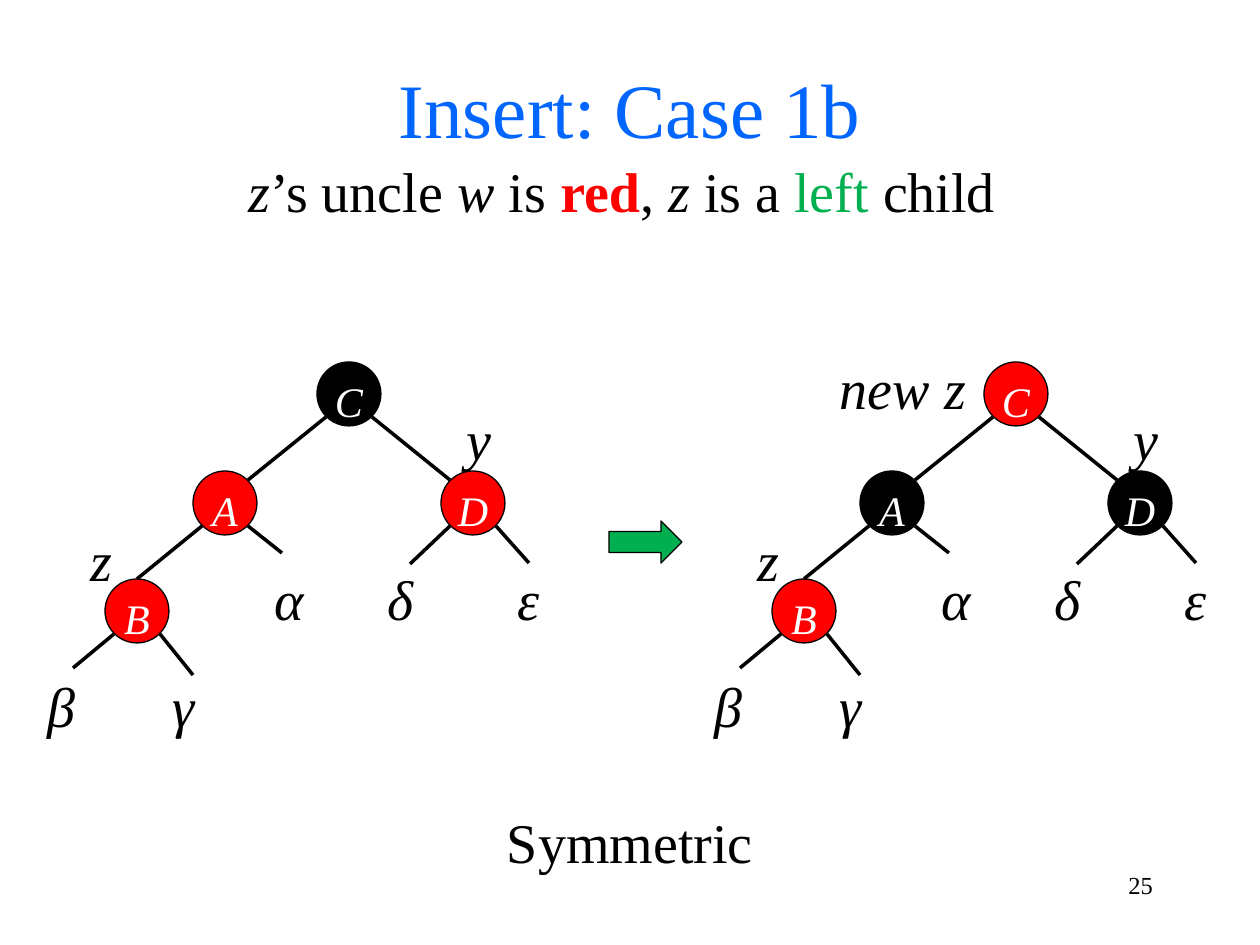
from lxml import etree
from pptx import Presentation
from pptx import util as u
from pptx.dml.color import RGBColor
from pptx.enum import shapes, text
from pptx.oxml.ns import qn

FONT = "Times New Roman"
HUES = {"black": "000000", "white": "FFFFFF", "red": "FF0000",
        "green": "00B050", "blue": "0066FF"}
SIDE = 64    # node diameter
REACH = 23   # from a node's centre to its diagonal points, in x and y

# Places inside a tree's box: node centres, edges and leaf stubs, labels
NODES = {"C": (328, 53), "A": (204, 162), "D": (452, 162), "B": (116, 270)}
EDGES = [("C", -1, "A"), ("C", 1, "D")]
STUBS = [("A", -1, (116, 238)), ("A", 1, (261, 212)),
         ("D", -1, (389, 223)), ("D", 1, (508, 222)),
         ("B", -1, (52, 327)), ("B", 1, (172, 334))]
LABELS = [("z", 52, 173, 57), ("y", 429, 52, 57),
          (" α", 221, 212, 81), (" δ", 332, 212, 81), (" ε", 460, 212, 81),
          ("β", 0, 319, 81), (" γ", 115, 319, 81)]


def px(n):
    return u.Emu(round(n * 914400 / 126))


def hue(name):
    return RGBColor.from_string(HUES[name])


def place(shape, x, y, w, h):
    box = {"left": x, "top": y, "width": w, "height": h}
    for key, val in box.items():
        setattr(shape, key, px(val))


def write(shape, runs, size, top, align="CENTER", anchor="TOP", side=0):
    """Fill a shape with one paragraph; runs are (words, colour, italic, bold)."""
    frame = shape.text_frame
    form = {"word_wrap": True, "auto_size": text.MSO_AUTO_SIZE.NONE,
            "vertical_anchor": getattr(text.MSO_ANCHOR, anchor),
            "margin_top": px(top), "margin_bottom": 0,
            "margin_left": px(side), "margin_right": px(side)}
    for key, val in form.items():
        setattr(frame, key, val)
    para = frame.paragraphs[0]
    para.alignment = getattr(text.PP_ALIGN, align)
    para.space_before = u.Pt(0)
    for words, tint, slant, bold in runs:
        run = para.add_run()
        run.text = words
        look = {"name": FONT, "size": u.Pt(size), "italic": slant, "bold": bold}
        for key, val in look.items():
            setattr(run.font, key, val)
        run.font.color.rgb = hue(tint)
    return para


def label(parts, words, x, y, w, h=62, slant=True):
    box = parts.add_textbox(px(x), px(y), px(w), px(h))
    write(box, [(words, "black", slant, False)], 32, 12)


def solid(parts, kind, tint, x, y, w, h):
    shape = parts.add_shape(kind, px(x), px(y), px(w), px(h))
    shape.shadow.inherit = False
    shape.fill.solid()
    shape.fill.fore_color.rgb = hue(tint)
    shape.line.color.rgb = hue("black")
    shape.line.width = u.Pt(0.75)
    return shape


def line(parts, x1, y1, x2, y2):
    link = parts.add_connector(shapes.MSO_CONNECTOR.STRAIGHT,
                               px(x1), px(y1), px(x2), px(y2))
    link.line.color.rgb = hue("black")
    link.line.width = u.Pt(2)
    etree.SubElement(link.element.spPr, qn("a:effectLst"))


def tree(slide, x, y, tints, root=None):
    parts = slide.shapes.add_group_shape().shapes
    # Nodes
    for name, (cx, cy) in NODES.items():
        node = solid(parts, shapes.MSO_SHAPE.OVAL, tints[name],
                     x + cx - SIDE / 2, y + cy - SIDE / 2, SIDE, SIDE)
        write(node, [(name, "white", True, False)], 24, 14, anchor="MIDDLE")
    # Edges between nodes, then stubs to the subtrees
    ends = [(a, way, (NODES[b][0] - way * REACH, NODES[b][1] - REACH))
            for a, way, b in EDGES]
    for name, way, (ex, ey) in ends + STUBS:
        cx, cy = NODES[name]
        line(parts, x + cx + way * REACH, y + cy + REACH, x + ex, y + ey)
    # Labels
    for words, lx, ly, w in LABELS:
        label(parts, words, x + lx, y + ly, w)
    if root:
        label(parts, root, x + 131, y, 168, 81)


def heading(slide, x, y, w):
    title, body = slide.placeholders
    place(title, x, y, w, 129)
    write(title, [("Insert: Case 1b", "blue", False, False)], 44, 16)
    place(body, x - 1, y + 99, w, 81)
    para = write(body, [("z", "black", True, False),
                        ("’s uncle ", "black", False, False),
                        ("w", "black", True, False),
                        (" is ", "black", False, False),
                        ("red", "red", False, True),
                        (", ", "black", False, False),
                        ("z", "black", True, False),
                        (" is a ", "black", False, False),
                        ("left", "green", False, False),
                        (" child ", "black", False, False)], 32, 12)
    # No bullet or indent
    props = para._p.get_or_add_pPr()
    for key in ("marL", "indent"):
        props.set(key, "0")
    etree.SubElement(props, qn("a:buNone"))


def footer(slide, x, y, w):
    label(slide.shapes, "Symmetric", x, y, w, 81, slant=False)
    page = slide.shapes.add_textbox(px(x + 903), px(y + 65), px(262), px(63))
    write(page, [("25", "black", False, False)], 14, 9, "RIGHT", side=12)


def main():
    deck = Presentation()
    deck.slide_width, deck.slide_height = px(1260), px(945)
    slide = deck.slides.add_slide(deck.slide_layouts[1])
    heading(slide, 0, 45, 1260)
    tree(slide, 21, 341, {"C": "black", "A": "red", "D": "red", "B": "red"})
    solid(slide.shapes, shapes.MSO_SHAPE.RIGHT_ARROW, "green", 609, 521, 73, 42)
    tree(slide, 688, 341,
         {"C": "red", "A": "black", "D": "black", "B": "red"}, "new z")
    footer(slide, 0, 796, 1260)
    deck.save("out.pptx")


if __name__ == "__main__":
    main()
